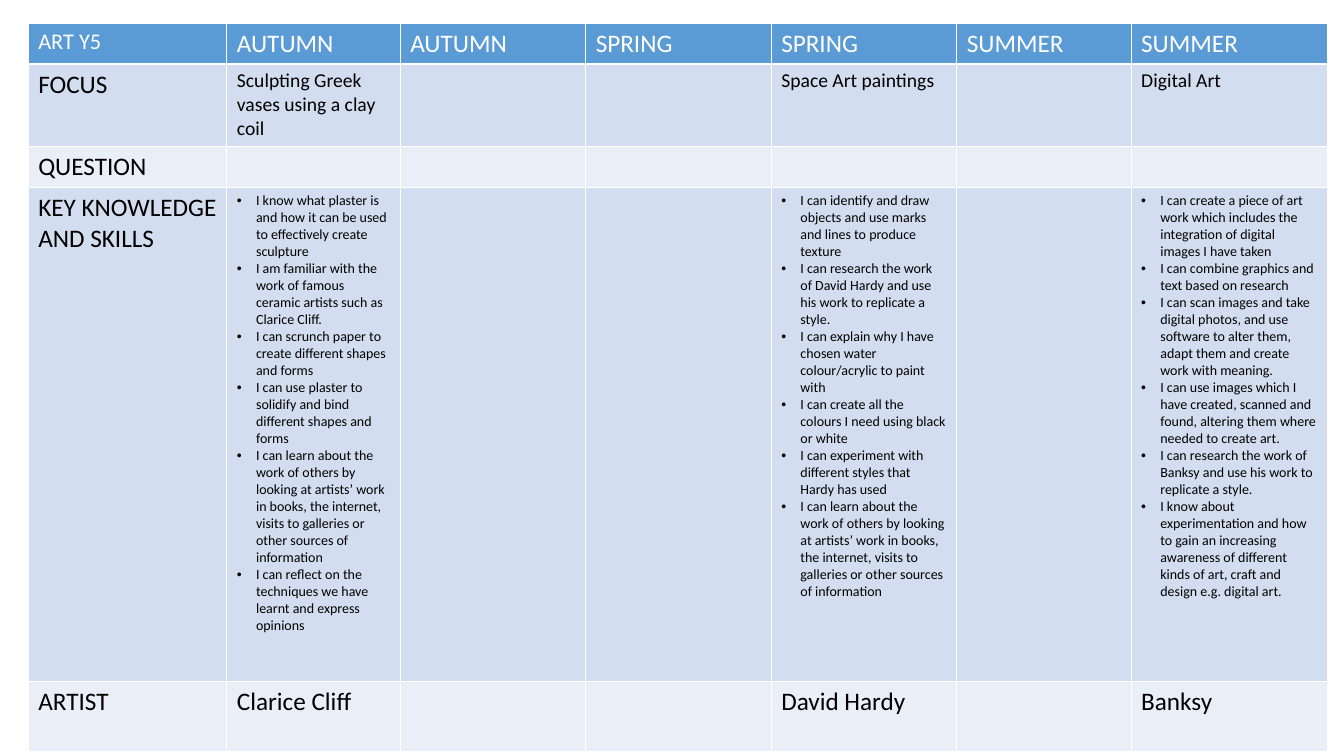
from pptx import Presentation
from pptx.dml.color import RGBColor
from pptx.util import Inches, Pt
from lxml import etree

DRAWING = "http://schemas.openxmlformats.org/drawingml/2006/main"


def color(value):
    return RGBColor.from_string(value)


def write(cell, content, size=18, ink="000000", bullets=False):
    lines = content if bullets else [content]
    for index, line in enumerate(lines):
        frame = cell.text_frame
        paragraph = frame.add_paragraph() if index else frame.paragraphs[0]
        run = paragraph.add_run()
        run.text = line
        run.font.name = "Calibri"
        run.font.size = Pt(size)
        run.font.bold = False
        run.font.color.rgb = color(ink)
        if bullets:
            properties = paragraph._p.get_or_add_pPr()
            properties.set("marL", str(Inches(0.19)))
            properties.set("indent", str(Inches(-0.19)))
            font = etree.SubElement(properties, f"{{{DRAWING}}}buFont")
            font.set("typeface", "Arial")
            bullet = etree.SubElement(properties, f"{{{DRAWING}}}buChar")
            bullet.set("char", "•")


presentation = Presentation()
presentation.slide_width = Inches(13.33)
presentation.slide_height = Inches(7.5)
slide = presentation.slides.add_slide(presentation.slide_layouts[6])

learn_from_others = (
    "I can learn about the work of others by looking at artists’ work in books, "
    "the internet, visits to galleries or other sources of information"
)
sculpture_skills = [
    "I know what plaster is and how it can be used to effectively create sculpture",
    "I am familiar with the work of famous ceramic artists such as Clarice Cliff. ",
    "I can scrunch paper to create different shapes and forms",
    "I can use plaster to solidify and bind different shapes and forms",
    learn_from_others,
    "I can reflect on the techniques we have learnt and express opinions",
]
painting_skills = [
    "I can identify and draw objects and use marks and lines to produce texture",
    "I can research the work of David Hardy and use his work to replicate a style. ",
    "I can explain why I have chosen water colour/acrylic to paint with",
    "I can create all the colours I need using black or white",
    "I can experiment with different styles that Hardy has used",
    learn_from_others,
]
digital_skills = [
    "I can create a piece of art work which includes the integration of digital "
    "images I have taken",
    "I can combine graphics and text based on research",
    "I can scan images and take digital photos, and use software to alter them, "
    "adapt them and create work with meaning.",
    "I can use images which I have created, scanned and found, altering them where "
    "needed to create art.",
    "I can research the work of Banksy and use his work to replicate a style. ",
    "I know about experimentation and how to gain an increasing awareness of "
    "different kinds of art, craft and design e.g. digital art.",
]

terms = ["AUTUMN", "AUTUMN", "SPRING", "SPRING", "SUMMER", "SUMMER"]
headings = ["FOCUS", "QUESTION", "KEY KNOWLEDGE AND SKILLS", "ARTIST"]
units = {
    1: ("Sculpting Greek vases using a clay coil", sculpture_skills, "Clarice Cliff"),
    4: ("Space Art paintings", painting_skills, "David Hardy"),
    6: ("Digital Art", digital_skills, "Banksy"),
}
column_widths = [1.97, 1.72, 1.84, 1.84, 1.84, 1.73, 1.95]
row_heights = [0.4, 0.82, 0.4, 4.9, 0.7]
row_fills = ["5B9BD5", "D2DEEF", "EAEFF7", "D2DEEF", "EAEFF7"]

table = slide.shapes.add_table(
    len(row_heights), len(column_widths), Inches(0.28), Inches(0.23),
    Inches(sum(column_widths)), Inches(sum(row_heights)),
).table
for column, width in zip(table.columns, column_widths):
    column.width = Inches(width)
for row, height, fill in zip(table.rows, row_heights, row_fills):
    row.height = Inches(height)
    for cell in row.cells:
        cell.fill.solid()
        cell.fill.fore_color.rgb = color(fill)

write(table.cell(0, 0), "ART Y5", size=16, ink="FFFFFF")
for column, term in enumerate(terms, 1):
    write(table.cell(0, column), term, ink="FFFFFF")
for row, heading in enumerate(headings, 1):
    write(table.cell(row, 0), heading)
for column, (focus, skills, artist) in units.items():
    write(table.cell(1, column), focus, size=14)
    write(table.cell(3, column), skills, size=10, bullets=True)
    write(table.cell(4, column), artist)

presentation.save("out.pptx")
